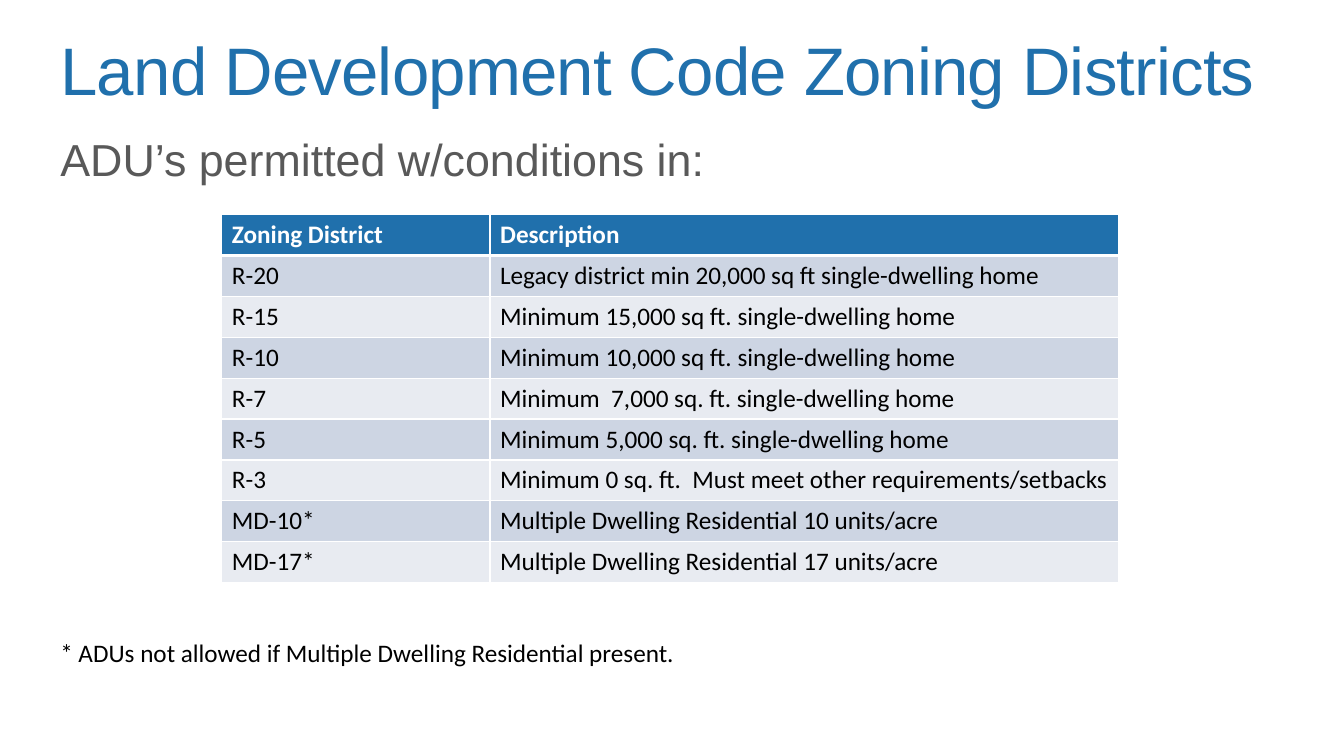
import pptx
import pptx.dml.color
import pptx.enum.text
import pptx.oxml
import pptx.oxml.ns
import pptx.util
from pptx.util import Cm

BLUE = pptx.dml.color.RGBColor(0x20, 0x70, 0xAC)
GREY = pptx.dml.color.RGBColor(0x59, 0x59, 0x59)
BLACK = pptx.dml.color.RGBColor(0x00, 0x00, 0x00)
WHITE = pptx.dml.color.RGBColor(0xFF, 0xFF, 0xFF)
BAND_DARK = pptx.dml.color.RGBColor(0xCD, 0xD5, 0xE3)
BAND_LIGHT = pptx.dml.color.RGBColor(0xE8, 0xEB, 0xF1)

LEFT = Cm(1.27)
TITLE_WIDTH = Cm(31.22)
ROW_HEIGHT = Cm(1.03)
COLUMN_WIDTHS = (Cm(6.76), Cm(15.83))

DISTRICTS = (
    ("Zoning District", "Description"),
    ("R-20", "Legacy district min 20,000 sq ft single-dwelling home"),
    ("R-15", "Minimum 15,000 sq ft. single-dwelling home"),
    ("R-10", "Minimum 10,000 sq ft. single-dwelling home"),
    ("R-7", "Minimum  7,000 sq. ft. single-dwelling home"),
    ("R-5", "Minimum 5,000 sq. ft. single-dwelling home"),
    ("R-3", "Minimum 0 sq. ft.  Must meet other requirements/setbacks"),
    ("MD-10*", "Multiple Dwelling Residential 10 units/acre"),
    ("MD-17*", "Multiple Dwelling Residential 17 units/acre"),
)


def write_text(tf, text, size=18, font="Calibri", color=BLACK, bold=False,
               line_spacing=1.0, tracking=None):
    """Fill a text frame with one left-aligned paragraph; tracking is in points."""
    tf.word_wrap = True
    p = tf.paragraphs[0]
    p.alignment = pptx.enum.text.PP_ALIGN.LEFT
    p.line_spacing = line_spacing
    p.space_before = pptx.util.Pt(0)
    r = p.add_run()
    r.text = text
    r.font.size = pptx.util.Pt(size)
    r.font.name = font
    r.font.bold = bold
    r.font.color.rgb = color
    if tracking is not None:
        r.font._element.set("spc", str(round(tracking * 100)))


def add_title(s, text):
    sp = s.shapes.title
    sp.left, sp.top, sp.width, sp.height = LEFT, Cm(0.79), TITLE_WIDTH, Cm(2.13)
    tf = sp.text_frame
    tf.auto_size = pptx.enum.text.MSO_AUTO_SIZE.NONE
    tf.vertical_anchor = pptx.enum.text.MSO_ANCHOR.MIDDLE
    write_text(tf, text, size=48, font="Arial", color=BLUE,
               line_spacing=0.9, tracking=-0.6)


def add_text(s, text, top, width, height, **style):
    sp = s.shapes.add_textbox(LEFT, top, width, height)
    write_text(sp.text_frame, text, **style)


def set_borders(cell, top=1, bottom=1):
    """Draw white borders, with top and bottom widths in points."""
    tc_pr = cell._tc.get_or_add_tcPr()
    for side, width in (("L", 1), ("R", 1), ("T", top), ("B", bottom)):
        tc_pr.append(pptx.oxml.parse_xml(
            f'<a:ln{side} {pptx.oxml.ns.nsdecls("a")} w="{pptx.util.Pt(width)}">'
            f'<a:solidFill><a:srgbClr val="{WHITE}"/></a:solidFill></a:ln{side}>'))


def add_district_table(s, left, top):
    row_count = len(DISTRICTS)
    table = s.shapes.add_table(row_count, len(COLUMN_WIDTHS), left, top,
                               sum(COLUMN_WIDTHS), ROW_HEIGHT * row_count).table
    for column, width in zip(table.columns, COLUMN_WIDTHS):
        column.width = width
    for i, texts in enumerate(DISTRICTS):
        header = i == 0
        fill = BLUE if header else BAND_DARK if i % 2 else BAND_LIGHT
        table.rows[i].height = ROW_HEIGHT
        for j, text in enumerate(texts):
            cell = table.cell(i, j)
            cell.margin_right = Cm(0.1)
            set_borders(cell, top=3 if i == 1 else 1, bottom=3 if header else 1)
            cell.fill.solid()
            cell.fill.fore_color.rgb = fill
            write_text(cell.text_frame, text, bold=header,
                       color=WHITE if header else BLACK)


def main():
    prs = pptx.Presentation()
    prs.slide_width, prs.slide_height = Cm(33.87), Cm(19.05)
    s = prs.slides.add_slide(prs.slide_layouts.get_by_name("Title Only"))
    add_title(s, "Land Development Code Zoning Districts")
    add_text(s, "ADU’s permitted w/conditions in:", Cm(3.35), TITLE_WIDTH, Cm(11.71),
             size=32, font="Arial", color=GREY, line_spacing=0.9)
    add_district_table(s, Cm(5.59), Cm(5.41))
    add_text(s, "* ADUs not allowed if Multiple Dwelling Residential present.",
             Cm(15.93), Cm(31.8), Cm(1.02))
    prs.save("out.pptx")


if __name__ == "__main__":
    main()
